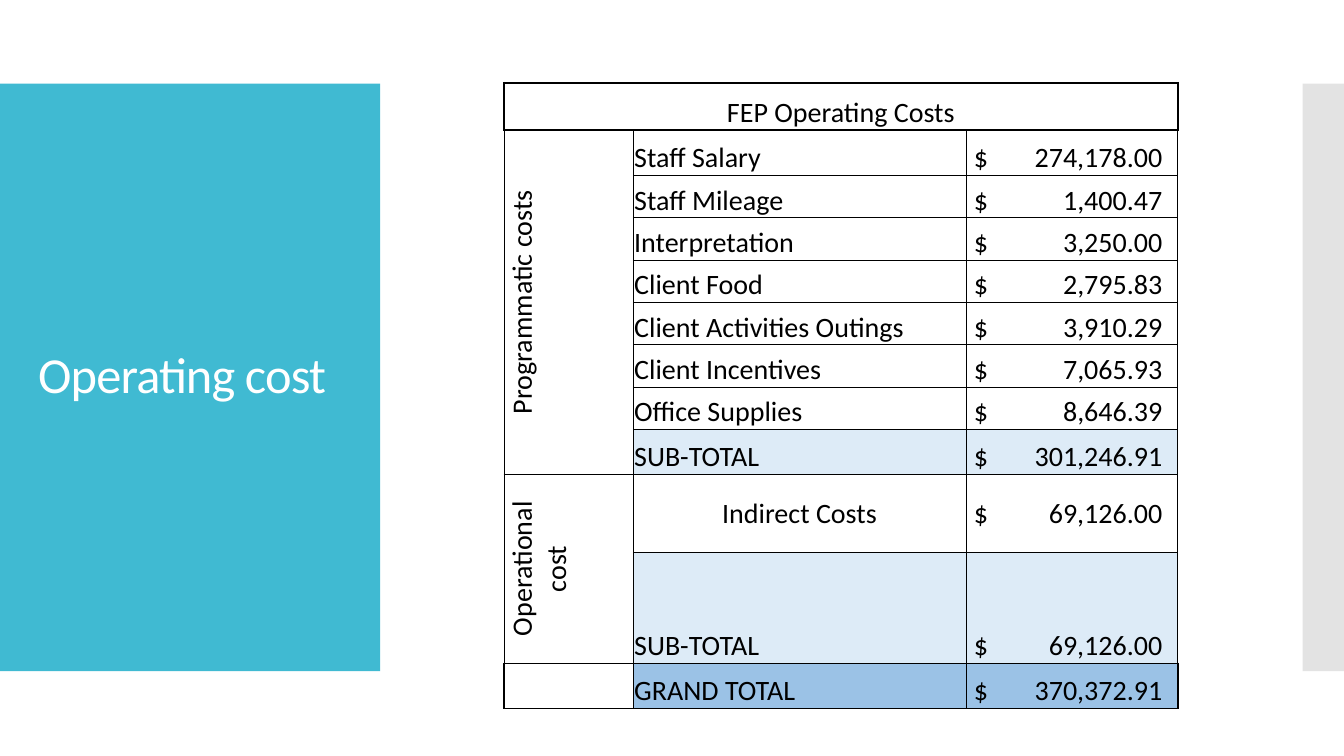
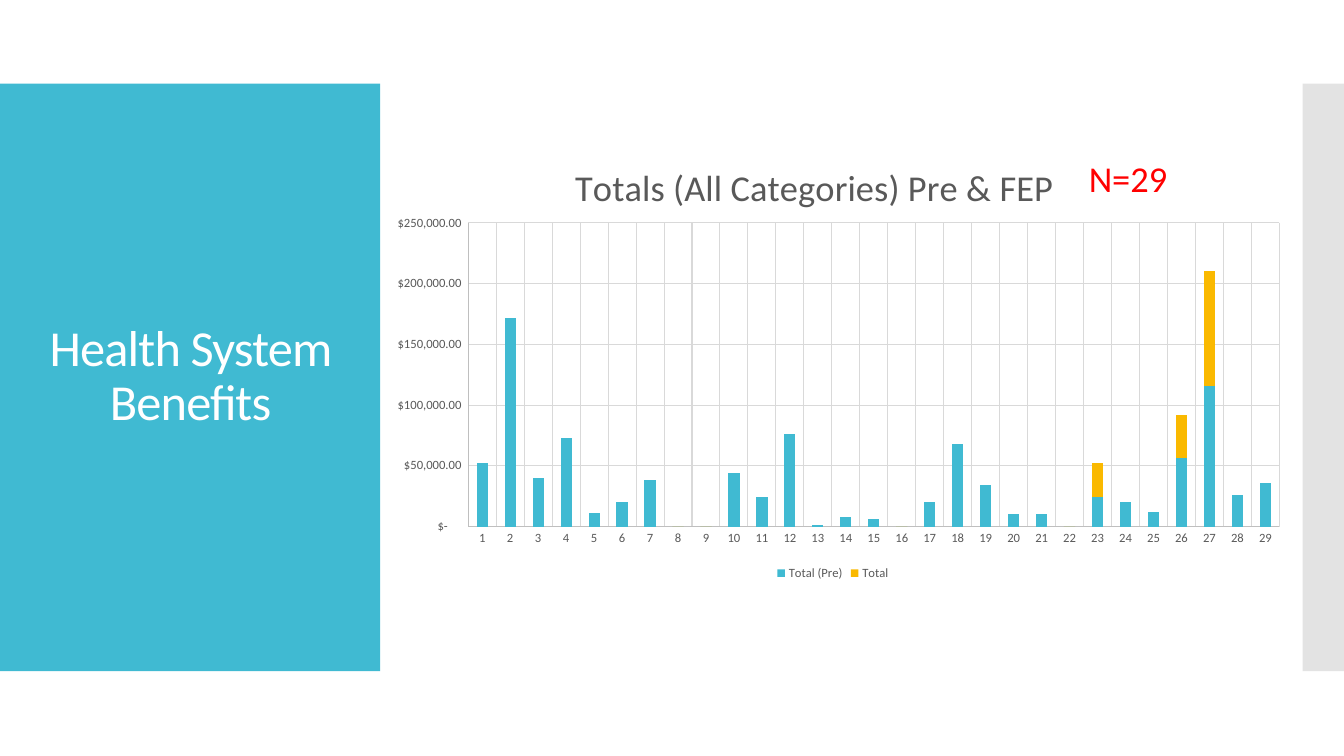
from lxml.etree import SubElement
from pptx import Presentation
from pptx.chart.data import CategoryChartData
from pptx.dml.color import RGBColor
from pptx.enum.chart import XL_CHART_TYPE, XL_LEGEND_POSITION, XL_TICK_MARK
from pptx.enum.shapes import MSO_SHAPE
from pptx.enum.text import MSO_ANCHOR, MSO_AUTO_SIZE, PP_ALIGN
from pptx.oxml.ns import qn
from pptx.util import Inches, Pt

FONT = "Calibri"
TEAL, GOLD, GREY = "40BAD2", "FAB900", "C8C8C8"
BLACK, WHITE, RED = "000000", "FFFFFF", "FF0000"
CHART_TEXT, AXIS_LINE, GRID_LINE = "595959", "BFBFBF", "D9D9D9"
PALE_BLUE, MID_BLUE = "DDEBF7", "9BC2E6"

PROGRAM_COSTS = [
    ("Staff Salary", "274,178.00"),
    ("Staff Mileage", "1,400.47"),
    ("Interpretation", "3,250.00"),
    ("Client Food", "2,795.83"),
    ("Client Activities Outings", "3,910.29"),
    ("Client Incentives", "7,065.93"),
    ("Office Supplies", "8,646.39"),
    ("SUB-TOTAL", "301,246.91"),
]
OPERATIONAL_COSTS = [("Indirect Costs", "69,126.00"), ("SUB-TOTAL", "69,126.00")]
GRAND_TOTAL = ("GRAND TOTAL", "370,372.91")
ROW_FILLS = {8: PALE_BLUE, 10: PALE_BLUE, 11: MID_BLUE}
ROW_RULES = {0: 1.5, 1: 1, 9: 1, 11: 1, 12: 1.5}
INDIRECT_ROW = 9

PRE_TOTALS = [
    52000, 172000, 40000, 73000, 11000, 20000, 38000, 0, 0, 44000,
    24000, 76000, 1000, 8000, 6000, 0, 20000, 68000, 34000, 10000,
    10000, 0, 24000, 20000, 12000, 56000, 116000, 26000, 36000,
]
FEP_TOTALS = {23: 28000, 26: 36000, 27: 94000}
DOLLARS = '_("$"* #,##0.00_);_("$"* \\(#,##0.00\\);_("$"* "-"??_);_(@_)'


def rgb(value):
    return RGBColor.from_string(value)


def style_font(font, size, color):
    font.name, font.size, font.bold = FONT, Pt(size), False
    font.color.rgb = rgb(color)


def style_line(line, color):
    line.color.rgb = rgb(color)
    line.width = Pt(0.75)


def set_layout(parent, **fractions):
    layout = parent.find(qn("c:layout"))
    if layout is None:
        layout = parent.makeelement(qn("c:layout"))
        parent.insert(0, layout)
    manual = SubElement(layout, qn("c:manualLayout"))
    if "w" in fractions:
        SubElement(manual, qn("c:layoutTarget"), val="inner")
    for side in "xy":
        SubElement(manual, qn(f"c:{side}Mode"), val="edge")
    for side, fraction in fractions.items():
        SubElement(manual, qn(f"c:{side}"), val=str(fraction))


class Deck:
    """Holds the shared style and the slide being built."""

    def __init__(self):
        self.presentation = Presentation()
        self.presentation.slide_width = Inches(13.33)
        self.presentation.slide_height = Inches(7.5)
        self.slide = None

    def start_slide(self, title, align):
        self.slide = self.presentation.slides.add_slide(
            self.presentation.slide_layouts[6])
        self.band(0, 3.77, TEAL)
        self.band(12.92, 0.41, GREY, 50)
        heading = self.text(title, (0.28, 1.23, 3.22, 5.03), 36, WHITE)
        heading.vertical_anchor = MSO_ANCHOR.MIDDLE
        paragraph = heading.paragraphs[0]
        paragraph.alignment = align
        paragraph.line_spacing = 0.9
        paragraph.runs[0].font._element.set("spc", "-60")

    def band(self, left, width, color, opacity=100):
        band = self.slide.shapes.add_shape(
            MSO_SHAPE.RECTANGLE, Inches(left), Inches(0.83),
            Inches(width), Inches(5.83))
        band.shadow.inherit = False
        band.line.fill.background()
        band.fill.solid()
        band.fill.fore_color.rgb = rgb(color)
        if opacity < 100:
            tint = band.element.spPr.find(qn("a:solidFill"))[0]
            SubElement(tint, qn("a:alpha"), val=str(opacity * 1000))

    def text(self, words, box, size, color, wrap=True):
        frame = self.slide.shapes.add_textbox(*map(Inches, box)).text_frame
        frame.text = words
        frame.word_wrap = wrap
        frame.auto_size = MSO_AUTO_SIZE.NONE if wrap else MSO_AUTO_SIZE.SHAPE_TO_FIT_TEXT
        style_font(frame.paragraphs[0].runs[0].font, size, color)
        return frame

    def table(self, box, widths, heights):
        table = self.slide.shapes.add_table(
            len(heights), len(widths), *map(Inches, box)).table
        table.first_row = table.horz_banding = False
        for column, width in zip(table.columns, widths):
            column.width = Inches(width)
        for row, height in zip(table.rows, heights):
            row.height = Inches(height)
        return table

    def cell(self, cell, words="", fill=None, align=PP_ALIGN.LEFT,
             anchor=MSO_ANCHOR.BOTTOM, upright=False, amount=False):
        cell.text = words
        cell.vertical_anchor = anchor
        cell.margin_left = Inches(0.08 if amount else 0.01)
        cell.margin_right = cell.margin_top = Inches(0.01)
        cell.margin_bottom = 0
        paragraph = cell.text_frame.paragraphs[0]
        paragraph.alignment = align
        style_font(paragraph.font, 20, BLACK)
        for run in paragraph.runs:
            style_font(run.font, 20, BLACK)
        if upright:
            cell._tc.get_or_add_tcPr().set("vert", "vert270")
        if amount:
            properties = paragraph._p.get_or_add_pPr()
            stops = properties.makeelement(qn("a:tabLst"))
            SubElement(stops, qn("a:tab"), pos=str(Inches(1.87)), algn="r")
            properties.insert(0, stops)
        if fill:
            cell.fill.solid()
            cell.fill.fore_color.rgb = rgb(fill)
        else:
            cell.fill.background()

    def borders(self, cell, **weights):
        properties = cell._tc.get_or_add_tcPr()
        for position, (side, weight) in enumerate(weights.items()):
            line = properties.makeelement(qn(f"a:ln{side}"), w=str(Pt(weight)))
            solid = SubElement(line, qn("a:solidFill"))
            SubElement(solid, qn("a:srgbClr"), val=BLACK)
            properties.insert(position, line)

    def stacked_columns(self, box, title, categories, series):
        data = CategoryChartData()
        data.categories = categories
        for name, values, _ in series:
            data.add_series(name, values)
        chart = self.slide.shapes.add_chart(
            XL_CHART_TYPE.COLUMN_STACKED, *map(Inches, box), data).chart
        style_font(chart.font, 10, BLACK)
        chart.has_title = True
        heading = chart.chart_title.text_frame
        heading.text = title
        style_font(heading.paragraphs[0].runs[0].font, 26, CHART_TEXT)
        set_layout(chart.chart_title._element, x=0.21, y=0.04)
        set_layout(chart.element.find(f"{qn('c:chart')}/{qn('c:plotArea')}"),
                   x=0.1, y=0.19, w=0.89, h=0.68)
        chart.has_legend = True
        chart.legend.position = XL_LEGEND_POSITION.BOTTOM
        chart.legend.include_in_layout = False
        style_font(chart.legend.font, 9, CHART_TEXT)
        for axis in (chart.category_axis, chart.value_axis):
            axis.major_tick_mark = axis.minor_tick_mark = XL_TICK_MARK.NONE
            axis.has_major_gridlines = True
            style_line(axis.major_gridlines.format.line, GRID_LINE)
            style_line(axis.format.line, AXIS_LINE)
            style_font(axis.tick_labels.font, 9, CHART_TEXT)
        plot = chart.plots[0]
        plot.gap_width, plot.overlap, plot.vary_by_categories = 150, 100, False
        for columns, (_, _, color) in zip(plot.series, series):
            columns.format.fill.solid()
            columns.format.fill.fore_color.rgb = rgb(color)
        return chart


def add_operating_cost(deck):
    deck.start_slide("Operating cost", PP_ALIGN.LEFT)
    heights = [0.47, 0.45] + [0.42] * 6 + [0.45, 0.77, 0.77, 0.45]
    costs = deck.table((5, 0.82, 6.68, 5.89), [1.28, 3.3, 2.1], heights)
    costs.cell(0, 0).merge(costs.cell(0, 2))
    costs.cell(1, 0).merge(costs.cell(8, 0))
    costs.cell(9, 0).merge(costs.cell(10, 0))

    deck.cell(costs.cell(0, 0), "FEP Operating Costs", align=PP_ALIGN.CENTER)
    for row, group in ((1, "Programmatic costs"), (9, "Operational cost")):
        deck.cell(costs.cell(row, 0), group, align=PP_ALIGN.CENTER,
                  anchor=MSO_ANCHOR.MIDDLE, upright=True)
    deck.cell(costs.cell(11, 0))
    entries = PROGRAM_COSTS + OPERATIONAL_COSTS + [GRAND_TOTAL]
    for row, (item, amount) in enumerate(entries, 1):
        indirect = row == INDIRECT_ROW
        anchor = MSO_ANCHOR.MIDDLE if indirect else MSO_ANCHOR.BOTTOM
        align = PP_ALIGN.CENTER if indirect else PP_ALIGN.LEFT
        fill = ROW_FILLS.get(row)
        deck.cell(costs.cell(row, 1), item, fill, align, anchor)
        deck.cell(costs.cell(row, 2), f"$\t{amount}", fill, anchor=anchor, amount=True)

    for row in range(len(heights)):
        frame = 1.5 if row in (0, 11) else 1
        for column in range(3):
            cell = costs.cell(row, column)
            deck.borders(
                cell,
                L=frame if column == 0 else 0.5,
                R=frame if column + cell.span_width == 3 else 0.5,
                T=ROW_RULES.get(row, 0.5),
                B=ROW_RULES.get(row + cell.span_height, 0.5))


def add_health_benefits(deck):
    deck.start_slide("Health System Benefits", PP_ALIGN.CENTER)
    clients = range(1, len(PRE_TOTALS) + 1)
    totals = deck.stacked_columns(
        (3.74, 1.37, 9.04, 4.43), "Totals (All Categories) Pre & FEP",
        [str(client) for client in clients],
        [("Total (Pre)", PRE_TOTALS, TEAL),
         ("Total", [FEP_TOTALS.get(client, 0) for client in clients], GOLD)])
    dollars = totals.value_axis
    dollars.minimum_scale, dollars.maximum_scale = 0, 250000
    dollars.major_unit = 50000
    dollars.tick_labels.number_format = DOLLARS
    dollars.tick_labels.number_format_is_linked = False
    deck.text("N=29", (10.7, 1.5, 1.02, 0.54), 26, RED, wrap=False)


def main():
    deck = Deck()
    add_operating_cost(deck)
    add_health_benefits(deck)
    deck.presentation.save("out.pptx")


if __name__ == "__main__":
    main()
